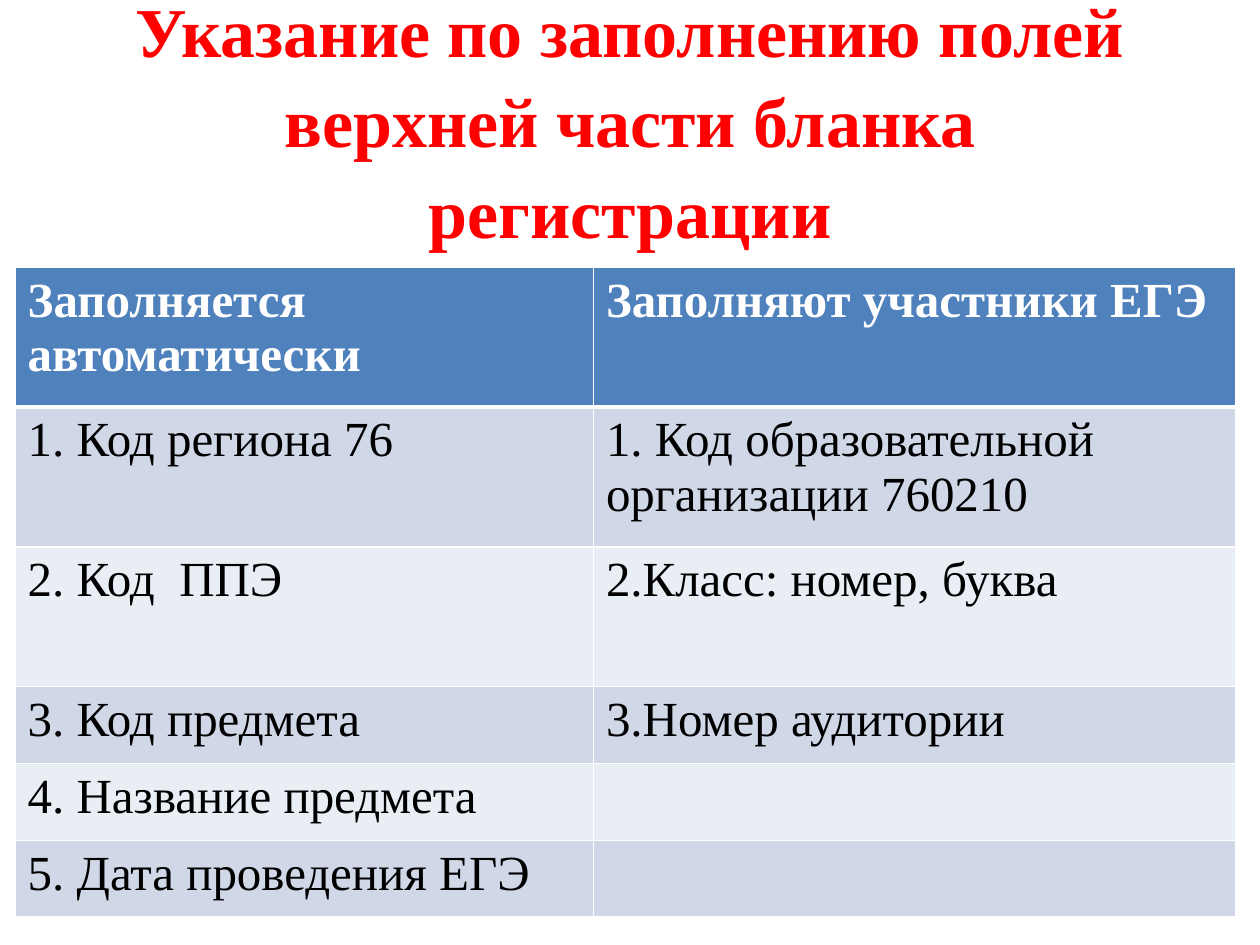
from lxml.etree import SubElement
from pptx import Presentation
from pptx.dml.color import RGBColor
from pptx.enum.text import MSO_ANCHOR, PP_ALIGN
from pptx.oxml.ns import qn
from pptx.util import Inches, Pt

FONT = "Times New Roman"
WHITE = "FFFFFF"
HEADER_FILL = "4F81BD"
BAND_FILLS = ("E9EDF4", "D0D8E8")
COLUMN_WIDTHS = (4.59, 5.1)
TALL_ROW, SHORT_ROW = 1.11, 0.61
ROW_HEIGHTS = (TALL_ROW,) * 3 + (SHORT_ROW,) * 3
ROWS = (
    ("Заполняется автоматически", "Заполняют участники ЕГЭ"),
    ("1. Код региона 76", "1. Код образовательной организации 760210"),
    ("2. Код  ППЭ", "2.Класс: номер, буква"),
    ("3. Код предмета", "3.Номер аудитории"),
    ("4. Название предмета", ""),
    ("5. Дата проведения ЕГЭ", ""),
)


def color(value):
    return RGBColor.from_string(value)


def add_run(paragraph, text, size, text_color, bold):
    run = paragraph.add_run()
    run.text = text
    run.font.name = FONT
    run.font.size = Pt(size)
    run.font.bold = bold
    run.font.color.rgb = color(text_color)


def place_title(slide, text):
    title = slide.shapes.title
    title.left, title.top = Inches(0.5), Inches(0.3)
    title.width, title.height = Inches(9), Inches(1.25)
    title.text_frame.word_wrap = True
    title.text_frame.vertical_anchor = MSO_ANCHOR.MIDDLE
    paragraph = title.text_frame.paragraphs[0]
    paragraph.alignment = PP_ALIGN.CENTER
    paragraph.line_spacing = 1.08
    add_run(paragraph, text, 40, "FF0000", True)


def set_borders(cell, top, bottom):
    properties = cell._tc.get_or_add_tcPr()
    for side, width in (("L", 1), ("R", 1), ("T", top), ("B", bottom)):
        line = SubElement(properties, qn(f"a:ln{side}"), w=str(Pt(width)))
        fill = SubElement(line, qn("a:solidFill"))
        SubElement(fill, qn("a:srgbClr"), val=WHITE)


def format_cell(cell, text, row_index):
    is_header = row_index == 0
    set_borders(cell, 3 if row_index == 1 else 1, 3 if is_header else 1)
    cell.fill.solid()
    cell.fill.fore_color.rgb = color(HEADER_FILL if is_header else BAND_FILLS[row_index % 2])
    if text:
        text_color = WHITE if is_header else "000000"
        add_run(cell.text_frame.paragraphs[0], text, 28, text_color, is_header)


def add_fields_table(slide):
    frame = slide.shapes.add_table(
        len(ROWS), len(COLUMN_WIDTHS), Inches(0.12), Inches(2.12),
        Inches(sum(COLUMN_WIDTHS)), Inches(sum(ROW_HEIGHTS)),
    )
    table = frame.table
    for column, width in zip(table.columns, COLUMN_WIDTHS):
        column.width = Inches(width)
    for row_index, (row, height) in enumerate(zip(table.rows, ROW_HEIGHTS)):
        row.height = Inches(height)
        for cell, text in zip(row.cells, ROWS[row_index]):
            format_cell(cell, text, row_index)


def main():
    presentation = Presentation()
    presentation.slide_width, presentation.slide_height = Inches(10), Inches(7.5)
    slide = presentation.slides.add_slide(presentation.slide_layouts[5])
    place_title(slide, "Указание по заполнению полей верхней части бланка регистрации")
    add_fields_table(slide)
    presentation.save("out.pptx")


if __name__ == "__main__":
    main()
